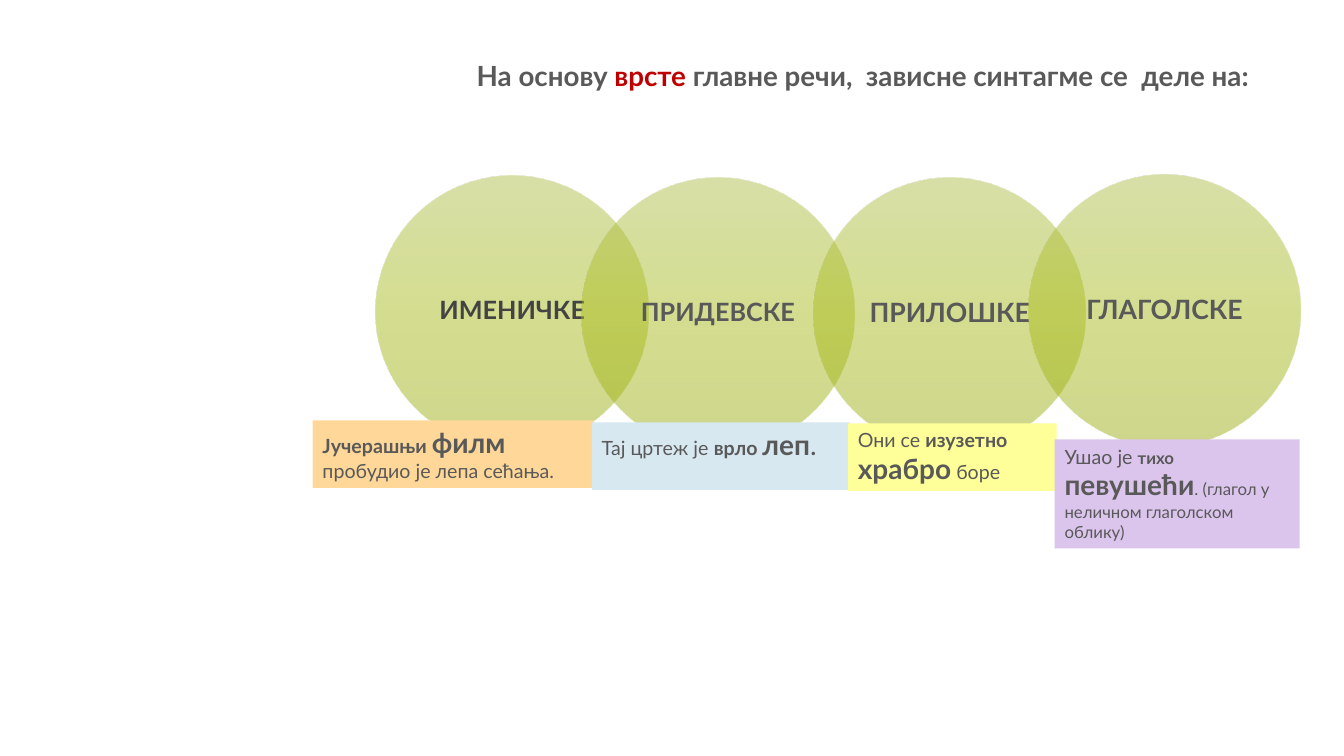
from lxml import etree
from pptx import Presentation
from pptx.dml.color import RGBColor
from pptx.enum.shapes import MSO_SHAPE as Shape
from pptx.enum.text import MSO_ANCHOR as Anchor, PP_ALIGN as Align
from pptx.oxml import parse_xml
from pptx.util import Inches, Pt

GRAY = RGBColor(0x59, 0x59, 0x59)
DARK = RGBColor(0x43, 0x43, 0x43)
RED = RGBColor(0xC0, 0x00, 0x00)
ORANGE = RGBColor(0xFF, 0xD8, 0x99)
BLUE = RGBColor(0xD8, 0xE8, 0xF1)
YELLOW = RGBColor(0xFF, 0xFF, 0x99)
PURPLE = RGBColor(0xDC, 0xC5, 0xED)
GREENS = [(0, "B2C251"), (50, "ACBE20"), (100, "9DAF16")]
NS = "http://schemas.openxmlformats.org/drawingml/2006/main"


def write(shape, runs, align=Align.LEFT, anchor=Anchor.TOP, space=1.0, side=0.1, edge=0.05):
    """Fill a shape with runs of (text, size, bold, colour)."""
    frame = shape.text_frame
    frame.word_wrap = True
    frame.vertical_anchor = anchor
    frame.margin_left = frame.margin_right = Inches(side)
    frame.margin_top = frame.margin_bottom = Inches(edge)
    para = frame.paragraphs[0]
    para.alignment = align
    para.line_spacing = space
    for text, size, bold, color in runs:
        run = para.add_run()
        run.text = text
        run.font.name = "Lato"
        run.font.size = Pt(size)
        run.font.bold = bold
        run.font.color.rgb = color


def add_plain(kind, left, top, width, height):
    """Add a preset shape with no line and no shadow."""
    shape = slide.shapes.add_shape(kind, Inches(left), Inches(top), Inches(width), Inches(height))
    shape.shadow.inherit = False
    shape.line.fill.background()
    return shape


deck = Presentation()
deck.slide_width = Inches(13.33)
deck.slide_height = Inches(7.5)
slide = deck.slides.add_slide(deck.slide_layouts[6])

# Title
title = slide.shapes.add_textbox(Inches(4.63), Inches(0.59), Inches(8.04), Inches(0.36))
write(title, [
    ("На основу ", 19.8, True, GRAY),
    ("врсте", 19.8, True, RED),
    (" главне речи,  зависне синтагме се  деле на:", 19.8, True, GRAY),
], anchor=Anchor.MIDDLE, space=0.9)

# Overlapping circles, each with a centred label
SIZE, LABEL = 2.7, 1.91
inset = (SIZE - LABEL) / 2
stops = "".join(
    f'<a:gs pos="{pos * 1000}"><a:srgbClr val="{color}"><a:alpha val="50000"/></a:srgbClr></a:gs>'
    for pos, color in GREENS)
circles = [
    (3.73, 1.74, "ИМЕНИЧКЕ", 18, DARK),
    (5.77, 1.76, "ПРИДЕВСКЕ", 18, GRAY),
    (8.07, 1.76, "ПРИЛОШКЕ", 19, GRAY),
    (10.2, 1.73, "ГЛАГОЛСКЕ", 19, GRAY),
]
for left, top, name, size, color in circles:
    circle = add_plain(Shape.OVAL, left, top, SIZE, SIZE)
    grad = parse_xml(f'<a:gradFill xmlns:a="{NS}" rotWithShape="1"><a:gsLst>{stops}</a:gsLst>'
                     '<a:lin ang="5400000" scaled="0"/></a:gradFill>')
    circle._element.spPr.find(etree.QName(NS, "prstGeom")).addnext(grad)
    label = slide.shapes.add_textbox(Inches(left + inset), Inches(top + inset),
                                     Inches(LABEL), Inches(LABEL))
    write(label, [(name, size, True, color)], align=Align.CENTER, anchor=Anchor.MIDDLE,
          space=0.9, side=0.15, edge=0.03)

# Example sentences under the circles
notes = [
    (3.1, 4.17, 2.79, 0.67, ORANGE, [
        ("Јучерашњи ", 14, True), ("филм", 20, True), (" пробудио је лепа сећања.", 14, False)]),
    (5.87, 4.19, 2.56, 0.67, BLUE, [
        ("Тај цртеж је ", 14, False), ("врло ", 14, True), ("леп", 20, True), (".", 20, False)]),
    (8.41, 4.2, 2.07, 0.67, YELLOW, [
        ("Они се ", 14, False), ("изузетно ", 14, True), ("храбро", 20, True),
        (" боре", 14, False)]),
    (10.46, 4.36, 2.43, 1.08, PURPLE, [
        ("Ушао је ", 14, False), ("тихо ", 12, True), ("певушећи", 20, True),
        (". (глагол у неличном глаголском облику)", 12, False)]),
]
for left, top, width, height, fill, runs in notes:
    note = add_plain(Shape.RECTANGLE, left, top, width, height)
    note.fill.solid()
    note.fill.fore_color.rgb = fill
    write(note, [(*run, GRAY) for run in runs])

deck.save("out.pptx")
